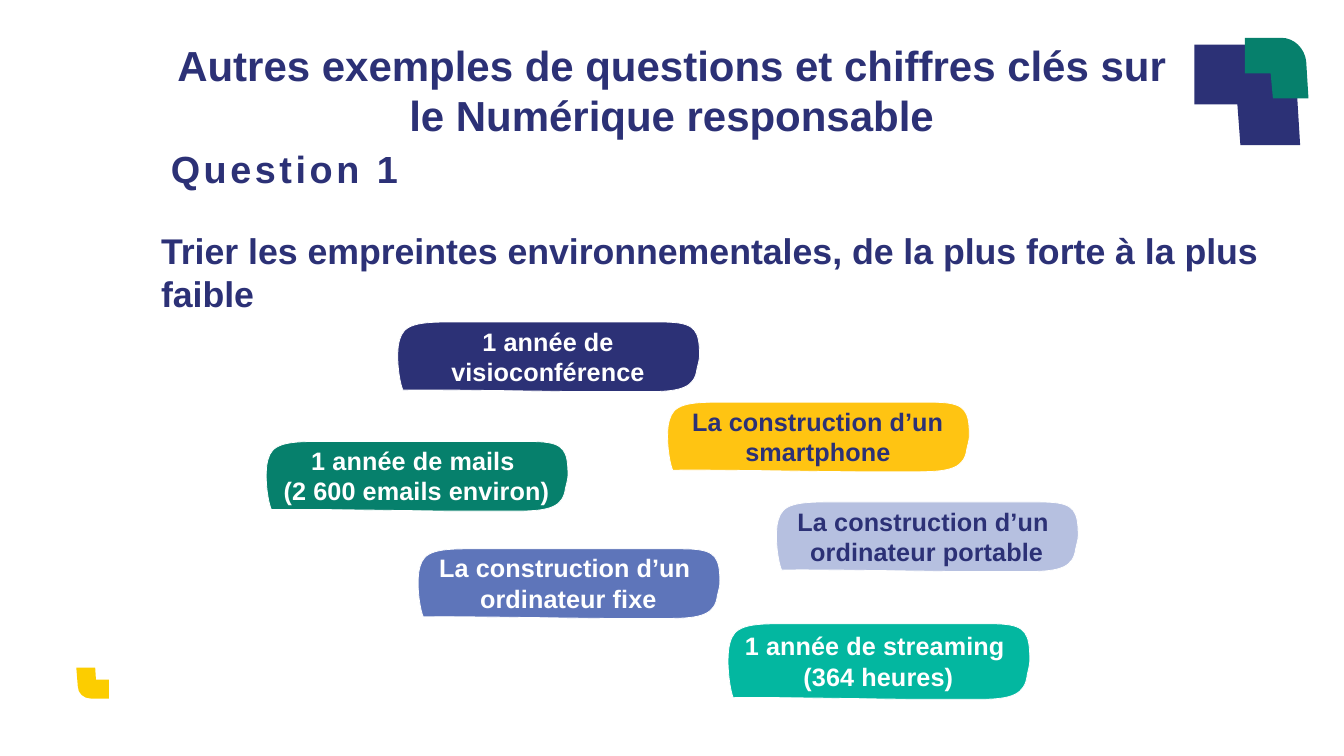
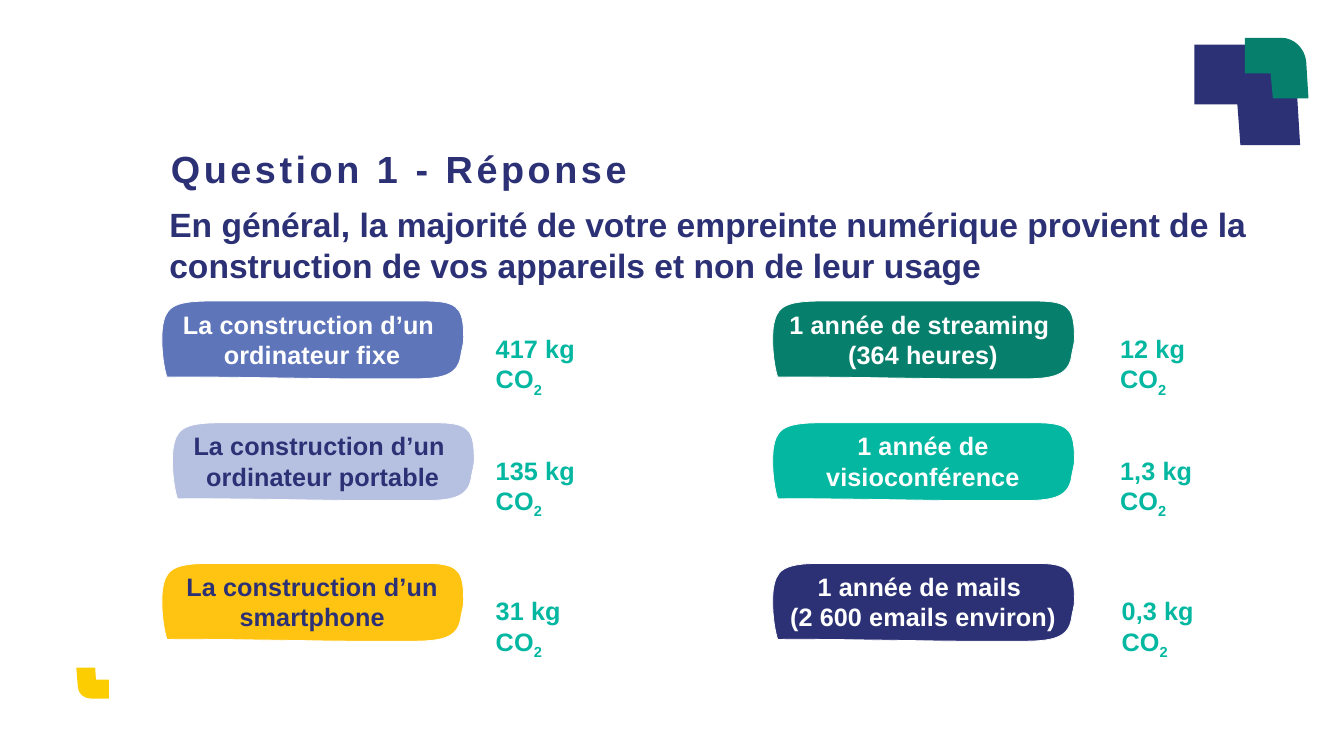
from lxml.etree import SubElement
from pptx import Presentation
from pptx.dml.color import RGBColor
from pptx.enum.text import MSO_ANCHOR, MSO_AUTO_SIZE, PP_ALIGN
from pptx.oxml.ns import qn
from pptx.util import Emu, Pt

NAVY, GREEN, TEAL, WHITE = "2C3176", "06806C", "03B7A0", "FFFFFF"
GOLD, YELLOW, BLUE, LILAC = "FFC412", "FCCD00", "5E75BA", "B6C0E0"
FONT = "Arial"
TITLE_ONLY = 5

DESKTOP = "La construction d’un \nordinateur fixe"
LAPTOP = "La construction d’un \nordinateur portable"
PHONE = "La construction d’un smartphone"
STREAMING = "1 année de streaming \n(364 heures)"
VIDEO_CALLS = "1 année de visioconférence"
MAILS = "1 année de mails \n(2 600 emails environ)"

# Outlines: two numbers are a corner, six are a cubic curve.
PILL_H = 93
PILL = [(401, 34), (402, 52, 401, 51, 398, 64), (395, 88, 378, 94, 335, 94),
        (254, 94), (213, 94, 56, 91, 9, 92), (6, 86, 0, 58, 3, 33),
        (7, 11, 14, 2, 65, 2), (351, 2), (390, 2, 399, 9, 401, 34)]
CORNER_NAVY = [(140, 133), (135, 51), (133, 22, 109, 0, 80, 0), (0, 0),
               (0, 79), (57, 79), (61, 133)]
CORNER_GREEN = [(84, 80), (81, 31), (79, 14, 65, 0, 48, 0), (0, 0),
                (0, 47), (34, 47), (37, 80)]
CORNER_YELLOW = [(25, 0), (0, 0), (2, 25), (2, 34, 10, 41, 19, 41),
                 (43, 41), (43, 16), (26, 16)]


def px(n):
    """Turn px (100 to the inch) into EMU."""
    return Emu(round(n * 9144))


def rgb(color):
    return RGBColor.from_string(color)


def bend(sp, outline):
    """Merge the three straight segments of each curve into one cubic."""
    route = next(sp._element.iter(qn("a:path")))
    lines = iter(route.findall(qn("a:lnTo")))
    for step in outline[1:]:
        first = next(lines)
        if len(step) == 6:
            curve = SubElement(route, qn("a:cubicBezTo"))
            first.addprevious(curve)
            for line in (first, next(lines), next(lines)):
                curve.append(line[0])
                route.remove(line)


def add_outline(s, outline, x, y, fill, stretch=1, line=None):
    points = [(px(x + step[i]), px(y + step[i + 1] * stretch))
              for step in outline for i in range(0, len(step), 2)]
    builder = s.shapes.build_freeform(*points[0], scale=1.0)
    builder.add_line_segments(points[1:], close=True)
    sp = builder.convert_to_shape()
    bend(sp, outline)
    sp.shadow.inherit = False
    sp.fill.solid()
    sp.fill.fore_color.rgb = rgb(fill)
    if line:
        sp.line.color.rgb = rgb(line)
        sp.line.width = Pt(0.75)
    else:
        sp.line.fill.background()
    return sp


def add_run(p, text, size, color, spacing=0, baseline=0):
    """Add a bold run; spacing is in points, baseline in percent."""
    r = p.add_run()
    r.text = text
    r.font.name, r.font.size, r.font.bold = FONT, Pt(size), True
    r.font.color.rgb = rgb(color)
    rPr = r._r.get_or_add_rPr()
    if spacing:
        rPr.set("spc", str(round(spacing * 100)))
    if baseline:
        rPr.set("baseline", str(baseline * 1000))


def write(tf, text, align=PP_ALIGN.LEFT, anchor=MSO_ANCHOR.TOP, margins=None, **fmt):
    tf.word_wrap = True
    tf.auto_size = MSO_AUTO_SIZE.NONE
    tf.vertical_anchor = anchor
    if margins:
        (tf.margin_left, tf.margin_top,
         tf.margin_right, tf.margin_bottom) = map(px, margins)
    for i, line in enumerate(text.split("\n")):
        p = tf.add_paragraph() if i else tf.paragraphs[0]
        p.alignment = align
        add_run(p, line, **fmt)


def place(sp, box):
    sp.left, sp.top, sp.width, sp.height = map(px, box)
    return sp


def add_box(s, box):
    return s.shapes.add_textbox(*map(px, box))


def add_corners(s):
    add_outline(s, CORNER_YELLOW, 101, 883, YELLOW)
    add_outline(s, CORNER_NAVY, 1580, 59, NAVY)
    add_outline(s, CORNER_GREEN, 1647, 50, GREEN)


def write_question(sp, text):
    place(sp, (122, 192, 767, 62))
    write(sp.text_frame, text, margins=(104, 1, 0, 0),
          size=36, color=NAVY, spacing=3.4)


def add_statement(s, box, text, size):
    write(add_box(s, box).text_frame, text, margins=(0, 0, 0, 0),
          size=size, color=NAVY)


def add_pill(s, x, y, label, fill, height=PILL_H):
    sp = add_outline(s, PILL, x, y, fill, stretch=height / PILL_H, line=WHITE)
    write(sp.text_frame, label, align=PP_ALIGN.CENTER, anchor=MSO_ANCHOR.MIDDLE,
          margins=(10, 4, 10, 6), size=24, spacing=0.1,
          color=NAVY if fill in (GOLD, LILAC) else WHITE)


def add_footprint(s, x, y, kilos):
    tf = add_box(s, (x, y, 165, 50)).text_frame
    fmt = dict(size=24, color=TEAL, spacing=0.1)
    write(tf, f"{kilos} kg CO", **fmt)
    add_run(tf.paragraphs[0], "2", baseline=-25, **fmt)


def new_slide(prs):
    s = prs.slides.add_slide(prs.slide_layouts[TITLE_ONLY])
    add_corners(s)
    return s


def question_slide(prs):
    s = new_slide(prs)
    title = place(s.shapes.title, (212, 52, 1353, 135))
    write(title.text_frame,
          "Autres exemples de questions et chiffres clés sur le Numérique responsable",
          align=PP_ALIGN.CENTER, margins=(0, 0, 0, 0), size=40, color=NAVY)
    write_question(add_box(s, (0, 0, 0, 0)), "Question 1")
    add_statement(s, (213, 303, 1518, 114),
                  "Trier les empreintes environnementales, de la plus forte "
                  "à la plus faible", 34)
    for x, y, label, fill, height in [
            (881, 530, PHONE, GOLD, PILL_H),
            (551, 724, DESKTOP, BLUE, PILL_H),
            (1025, 662, LAPTOP, LILAC, PILL_H),
            (524, 424, VIDEO_CALLS, NAVY, PILL_H),
            (961, 823, STREAMING, TEAL, 101),
            (350, 582, MAILS, GREEN, PILL_H)]:
        add_pill(s, x, y, label, fill, height)


def answer_slide(prs):
    s = new_slide(prs)
    write_question(s.shapes.title, "Question 1 - Réponse")
    add_statement(s, (224, 270, 1496, 108),
                  "En général, la majorité de votre empreinte numérique provient "
                  "de la construction de vos appareils et non de leur usage", 32)
    row_tops = (396, 557, 743)
    devices = [(212, DESKTOP, BLUE, 646, "417"),
               (226, LAPTOP, LILAC, 646, "135"),
               (212, PHONE, GOLD, 646, "31")]
    uses = [(1020, STREAMING, GREEN, 1472, "12"),
            (1020, VIDEO_CALLS, TEAL, 1472, "1,3"),
            (1020, MAILS, NAVY, 1474, "0,3")]
    for column in (devices, uses):
        for y, (x, label, fill, value_x, kilos) in zip(row_tops, column):
            add_pill(s, x, y, label, fill, height=104)
            add_footprint(s, value_x, y + 40, kilos)


def main():
    prs = Presentation()
    prs.slide_width, prs.slide_height = px(1778), px(1000)
    question_slide(prs)
    answer_slide(prs)
    prs.save("out.pptx")


if __name__ == "__main__":
    main()
